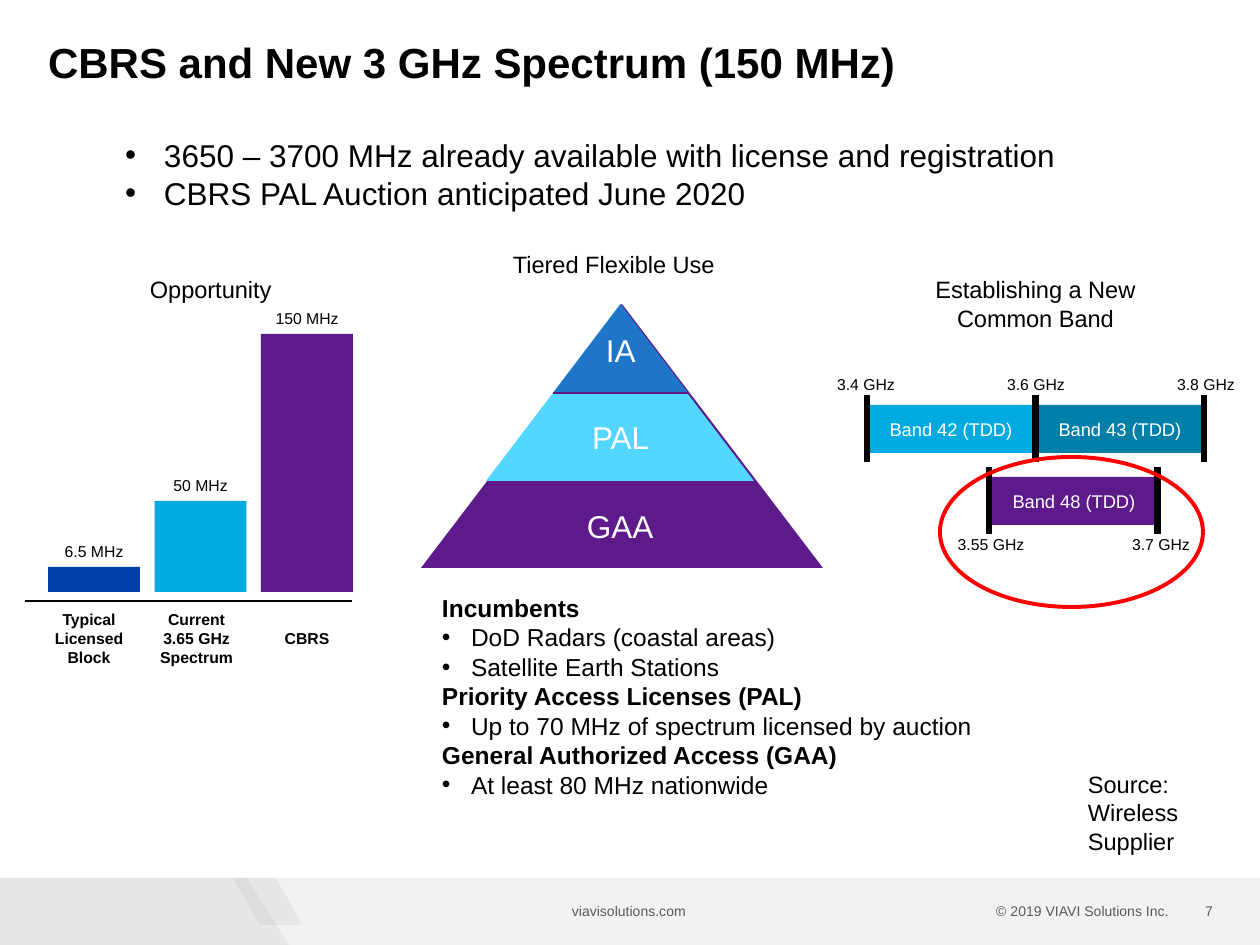
import pptx
import pptx.util
import pptx.dml.color
import pptx.enum.shapes
import pptx.enum.text
import pptx.oxml.ns
import lxml.etree

SHAPE = pptx.enum.shapes.MSO_SHAPE
ALIGN = pptx.enum.text.PP_ALIGN
ANCHOR = pptx.enum.text.MSO_ANCHOR
MIDDLE, TOP = ANCHOR.MIDDLE, ANCHOR.TOP
WHITE, BLACK, GREY, RED = "FFFFFF", "000000", "595959", "FF0000"
PURPLE, CYAN, TEAL, NAVY = "5D1A8B", "00AAE0", "007FA8", "0040A6"
SKY, BLUE = "53D6FF", "1F76C9"


def px(n):
    return round(n * 914400 / 126)


def color(code):
    return pptx.dml.color.RGBColor.from_string(code)


def child(node, tag, **attrs):
    return lxml.etree.SubElement(node, pptx.oxml.ns.qn(tag), **attrs)


def assign(item, values):
    for key, value in values.items():
        setattr(item, key, value)


def write(frame, lines, size, ink=BLACK, bold=False, align=ALIGN.LEFT,
          anchor=MIDDLE, inset=(0, 0, 0, 0), wrap=True, indent=0):
    sides = ("margin_left", "margin_top", "margin_right", "margin_bottom")
    assign(frame, dict(zip(sides, map(px, inset))))
    assign(frame, {"word_wrap": wrap, "vertical_anchor": anchor})
    for num, (words, dot, heavy) in enumerate(lines):
        para = frame.add_paragraph() if num else frame.paragraphs[0]
        para.alignment = align
        if dot:
            props = para._p.get_or_add_pPr()
            props.set("marL", str(px(indent)))
            props.set("indent", str(-px(indent)))
            child(props, "a:buFont", typeface="Arial")
            child(props, "a:buChar", char="•")
        run = para.add_run()
        run.text = words
        assign(run.font, {"name": "Arial", "size": pptx.util.Pt(size),
                          "bold": bold or heavy})
        run.font.color.rgb = color(ink)


def text(slide, box, lines, size, **form):
    if isinstance(lines, str):
        lines = [(lines, False, False)]
    frame = slide.shapes.add_textbox(*map(px, box)).text_frame
    write(frame, lines, size, **form)


def center(slide, box, words, size=9, **form):
    text(slide, box, words, size, align=ALIGN.CENTER, **form)


def paint(shape, fill):
    shape.shadow.inherit = False
    shape.fill.solid()
    shape.fill.fore_color.rgb = color(fill)
    shape.line.fill.background()


def block(slide, kind, box, fill):
    shape = slide.shapes.add_shape(kind, *map(px, box))
    paint(shape, fill)
    return shape


def ring(slide, box, ink, width):
    shape = slide.shapes.add_shape(SHAPE.OVAL, *map(px, box))
    shape.shadow.inherit = False
    shape.fill.background()
    shape.line.color.rgb = color(ink)
    shape.line.width = pptx.util.Pt(width)


def outline(slide, points, fill, alpha=100):
    spots = [(px(x), px(y)) for x, y in points]
    build = slide.shapes.build_freeform(*spots[0])
    build.add_line_segments(spots[1:], close=True)
    shape = build.convert_to_shape()
    paint(shape, fill)
    if alpha < 100:
        tint = shape.fill._xPr.find(".//" + pptx.oxml.ns.qn("a:srgbClr"))
        child(tint, "a:alpha", val=str(alpha * 1000))


def line(slide, ends, width, ink=BLACK):
    kind = pptx.enum.shapes.MSO_CONNECTOR.STRAIGHT
    link = slide.shapes.add_connector(kind, *map(px, ends))
    link.line.color.rgb = color(ink)
    link.line.width = pptx.util.Pt(width)
    child(link._element.spPr, "a:effectLst")


def footer(slide):
    block(slide, SHAPE.RECTANGLE, (0, 878, 1260, 68), "F2F2F2")
    outline(slide, [(-1, 878), (247, 878), (290, 947), (-1, 946)], "E7E7E7")
    outline(slide, [(233, 878), (276, 878), (301, 922), (300, 925),
                    (261, 925), (258, 922)], "A6A6A6", 14)
    text(slide, (1142, 892, 71, 38), "7", 8, ink=GREY, align=ALIGN.RIGHT)
    text(slide, (769, 886, 413, 50), "© 2019 VIAVI Solutions Inc.", 8,
         ink=GREY, align=ALIGN.RIGHT, inset=(13, 6, 13, 6))
    center(slide, (336, 896, 586, 30), "viavisolutions.com", 8, ink=GREY)


def bars(slide):
    text(slide, (150, 275, 123, 29), "Opportunity", 13.5, wrap=False)
    base, wide = 592, 92
    for num, (high, fill, value, name, left, span, rows) in enumerate([
            (25, NAVY, "6.5 MHz", "Typical Licensed Block", 43, 92, 3),
            (91, CYAN, "50 MHz", "Current 3.65 GHz Spectrum", 155, 83, 3),
            (258, PURPLE, "150 MHz", "CBRS", 261, 92, 1)]):
        x, y = 48 + num * 106.5, base - high
        block(slide, SHAPE.RECTANGLE, (x, y, wide, high), fill)
        center(slide, (x, y - 25, wide, 19), value)
        tall = rows * 19
        center(slide, (left, 638 - tall / 2, span, tall), name, bold=True)
    line(slide, (25, 601, 352, 601), 0.75)


def tiers(slide):
    text(slide, (513, 250, 204, 29), "Tiered Flexible Use", 13.5, wrap=False)
    for box, fill in [((421, 304, 402, 264), PURPLE),
                      ((486, 305, 268, 176), SKY),
                      ((553, 304, 135, 89), BLUE)]:
        block(slide, SHAPE.ISOSCELES_TRIANGLE, box, fill)
    line(slide, (553, 393, 688, 393), 1, PURPLE)
    for name, x, y, wide in [("IA", 606, 331, 30), ("PAL", 592, 418, 58),
                             ("GAA", 587, 507, 67)]:
        text(slide, (x, y, wide, 38), name, 18, ink=WHITE, wrap=False)


def bands(slide):
    center(slide, (921, 275, 229, 57), "Establishing a New Common Band", 13.5)
    for name, x, y, fill in [("Band 42 (TDD)", 867, 405, CYAN),
                             ("Band 43 (TDD)", 1036, 405, TEAL),
                             ("Band 48 (TDD)", 990, 477, PURPLE)]:
        shape = block(slide, SHAPE.RECTANGLE, (x, y, 168, 48), fill)
        write(shape.text_frame, [(name, False, False)], 10.5, ink=WHITE,
              align=ALIGN.CENTER)
    for names, tick, top, left, y in [
            (("3.4 GHz", "3.6 GHz", "3.8 GHz"), 867, 395, 820, 375),
            (("3.55 GHz", "3.7 GHz"), 989, 467, 945, 535)]:
        for num, name in enumerate(names):
            x = tick + num * 168.5
            line(slide, (x, top, x, top + 67), 3.5)
            center(slide, (left + num * 170, y, 92, 19), name)
    ring(slide, (940, 457, 263, 150), RED, 2.25)


def notes(slide):
    text(slide, (48, 30, 1166, 95), "CBRS and New 3 GHz Spectrum (150 MHz)",
         24, bold=True, anchor=TOP, inset=(0, 6, 0, 6))
    text(slide, (112, 130, 1003, 89), [
        ("3650 – 3700 MHz already available with license and registration",
         True, False),
        ("CBRS PAL Auction anticipated June 2020", True, False)],
        18, anchor=TOP, inset=(13, 6, 13, 6), indent=39)
    text(slide, (442, 592, 533, 208), [
        ("Incumbents", False, True),
        ("DoD Radars (coastal areas)", True, False),
        ("Satellite Earth Stations", True, False),
        ("Priority Access Licenses (PAL)", False, True),
        ("Up to 70 MHz of spectrum licensed by auction", True, False),
        ("General Authorized Access (GAA)", False, True),
        ("At least 80 MHz nationwide", True, False)], 14, indent=29)
    text(slide, (1075, 764, 150, 98), "Source: Wireless Supplier", 13.5,
         anchor=TOP, inset=(13, 6, 13, 6))


def main():
    deck = pptx.Presentation()
    assign(deck, {"slide_width": px(1260), "slide_height": px(945)})
    slide = deck.slides.add_slide(deck.slide_layouts[6])
    for draw in (footer, bars, tiers, bands, notes):
        draw(slide)
    deck.save("out.pptx")


if __name__ == "__main__":
    main()
